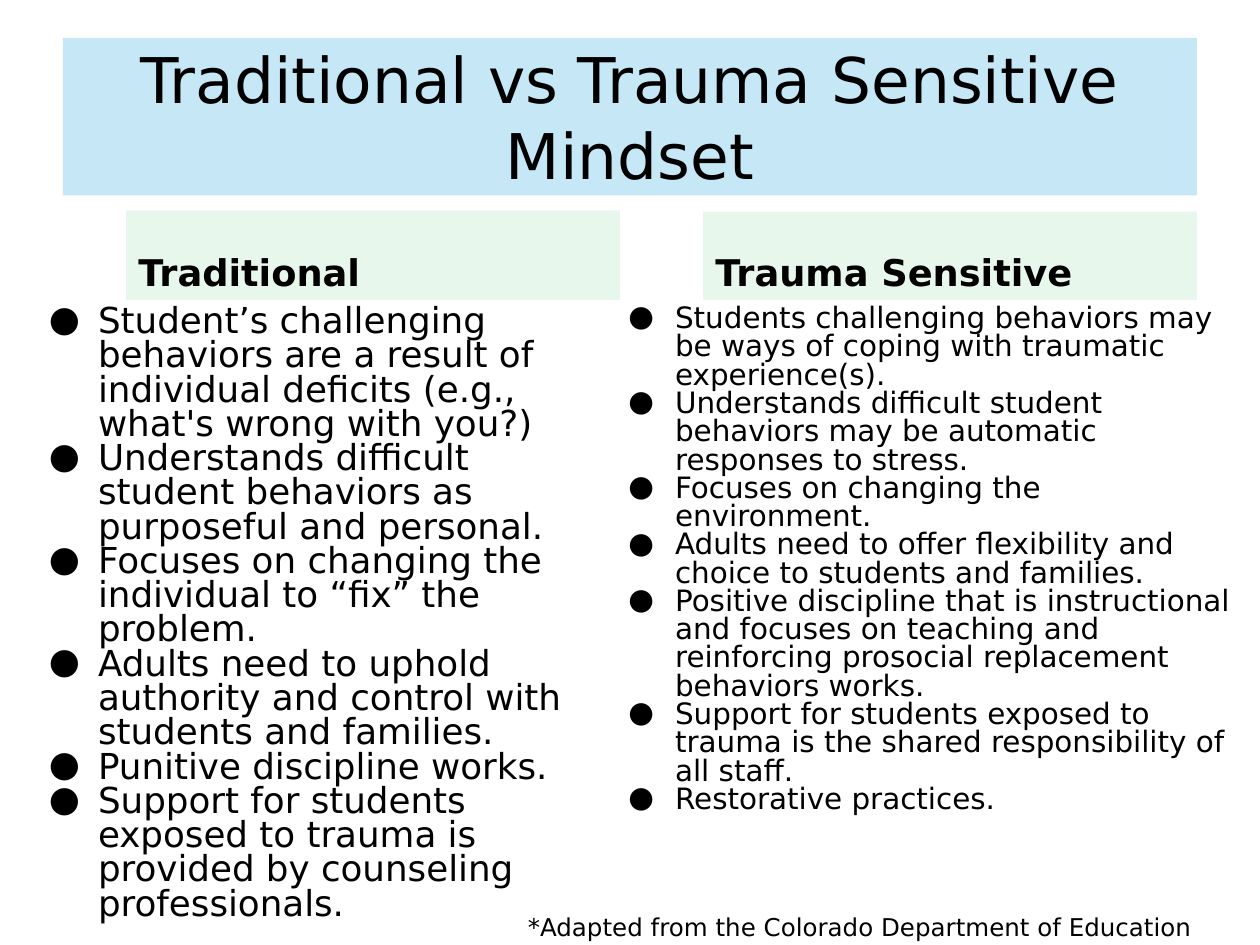
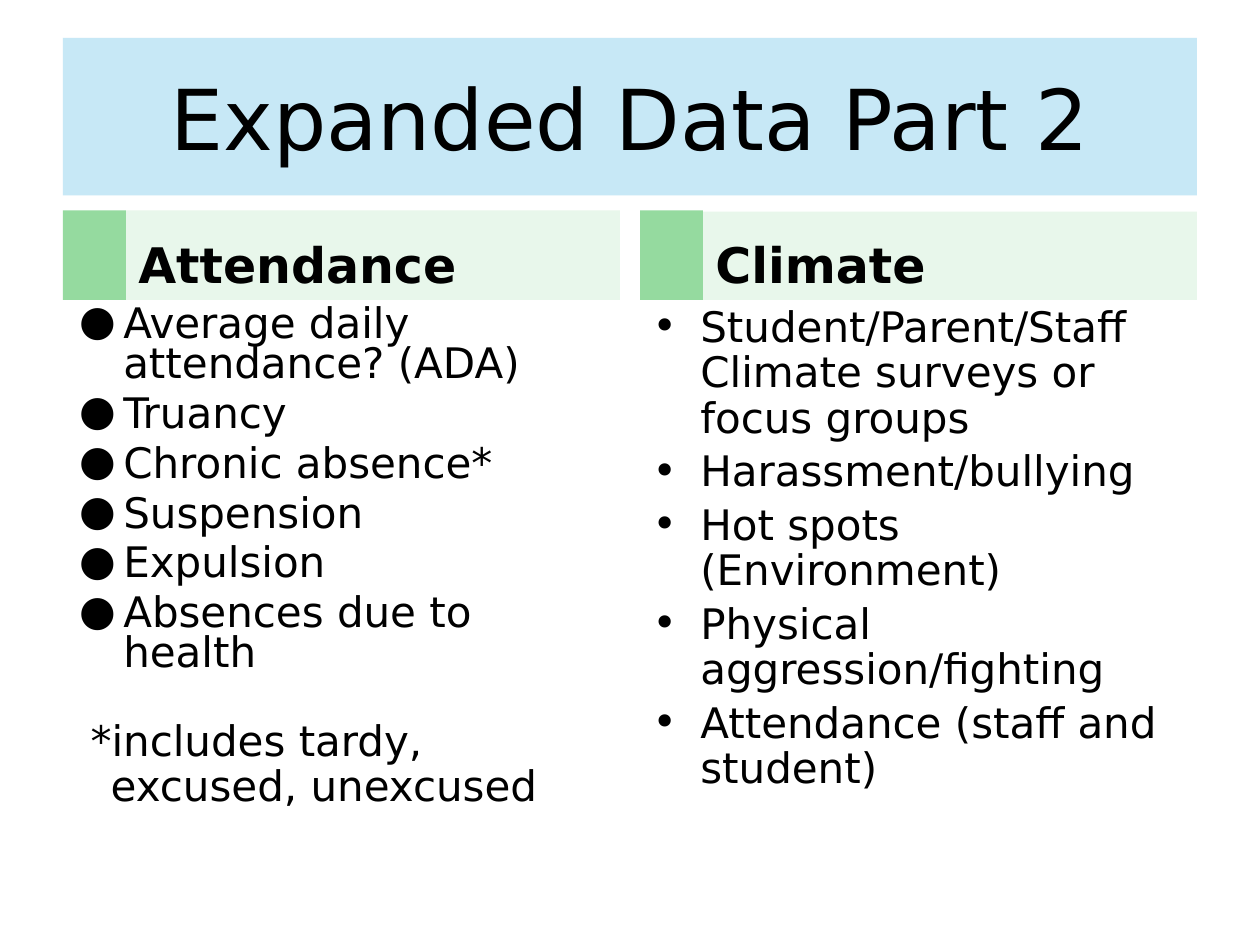
from lxml.etree import SubElement
from pptx import Presentation
from pptx.dml.color import RGBColor
from pptx.enum.shapes import MSO_SHAPE
from pptx.enum.text import MSO_ANCHOR, PP_ALIGN
from pptx.oxml.ns import qn
from pptx.util import Inches, Pt

COLORS = {"text": "000000", "title": "A9DCF2", "heading": "E8F7EB", "tab": "95DA9F"}
FONT = "DejaVu Sans"
TITLE_AT = (0.5, 0.3, 9, 1.25)
HEADING_AT = [(1, 1.67, 3.92, 0.71), (5.58, 1.68, 3.92, 0.7)]
TAB_LEFTS = [0.5, 5.08]
FOOTNOTE = "*Adapted from the Colorado Department of Education"

SLIDES = [
    {
        "title": "Traditional vs Trauma Sensitive Mindset",
        "title_size": 36,
        "title_alpha": 67,
        "heading_size": 21,
        "tabs": False,
        "columns": [
            {
                "heading": "Traditional",
                "at": (0.18, 2.38, 4.74, 5),
                "format": {"size": 20.4, "spacing": 0.8, "bullet": "●", "indent": (0.5, -0.39)},
                "points": [
                    "Student’s challenging behaviors are a result of individual deficits "
                    "(e.g., what's wrong with you?)",
                    "Understands difficult student behaviors as purposeful and personal.",
                    "Focuses on changing the individual to “fix” the problem.",
                    "Adults need to uphold authority and control with students and families.",
                    "Punitive discipline works.",
                    "Support for students exposed to trauma is provided by counseling "
                    "professionals.",
                ],
            },
            {
                "heading": "Trauma Sensitive",
                "at": (4.76, 2.38, 5.14, 5.12),
                "format": {"size": 16.8, "spacing": 0.8, "bullet": "●", "indent": (0.5, -0.37)},
                "points": [
                    "Students challenging behaviors may be ways of coping with traumatic "
                    "experience(s).",
                    "Understands difficult student behaviors may be automatic responses "
                    "to stress.",
                    "Focuses on changing the environment.",
                    "Adults need to offer flexibility and choice to students and families.",
                    "Positive discipline that is instructional and focuses on teaching and "
                    "reinforcing prosocial replacement behaviors works.",
                    "Support for students exposed to trauma is the shared responsibility "
                    "of all staff.",
                    "Restorative practices.",
                ],
            },
        ],
    },
    {
        "title": "Expanded Data Part 2",
        "title_size": 48,
        "title_alpha": 65,
        "heading_size": 28,
        "tabs": True,
        "columns": [
            {
                "heading": "Attendance",
                "at": (0.5, 2.38, 4.42, 4.32),
                "format": {"size": 24, "spacing": 0.8, "before": 5.4, "bullet": "●",
                           "indent": (0.38, -0.35)},
                "points": [
                    "Average daily attendance? (ADA)",
                    "Truancy",
                    "Chronic absence*",
                    "Suspension",
                    "Expulsion",
                    "Absences due to health",
                ],
                "note": "*includes tardy, excused, unexcused",
            },
            {
                "heading": "Climate",
                "at": (5.08, 2.38, 4.42, 4.32),
                "format": {"size": 24, "spacing": 0.9, "before": 4.8, "bullet": "•",
                           "indent": (0.38, -0.38)},
                "points": [
                    "Student/Parent/Staff Climate surveys or focus groups",
                    "Harassment/bullying",
                    "Hot spots (Environment)",
                    "Physical aggression/fighting",
                    "Attendance (staff and student)",
                ],
            },
        ],
    },
]
NOTE_FORMAT = {"size": 24, "spacing": 0.9, "before": 25, "indent": (0.28, -0.16)}


def add_block(slide, at, fill=None, alpha=100, anchor=MSO_ANCHOR.TOP, inset=0.05):
    """Add a text area, filled if a colour is named, and return it."""
    box = [Inches(length) for length in at]
    if fill:
        block = slide.shapes.add_shape(MSO_SHAPE.RECTANGLE, *box)
        block.shadow.inherit = False
        block.line.fill.background()
        block.fill.solid()
        block.fill.fore_color.rgb = RGBColor.from_string(COLORS[fill])
        if alpha < 100:
            color = block.fill._xPr.find(".//" + qn("a:srgbClr"))
            SubElement(color, qn("a:alpha"), val=str(alpha * 1000))
    else:
        block = slide.shapes.add_textbox(*box)
    frame_format = {
        "word_wrap": True, "vertical_anchor": anchor,
        "margin_left": Inches(0.1), "margin_right": Inches(0.1),
        "margin_top": Inches(inset), "margin_bottom": Inches(inset),
    }
    for name, value in frame_format.items():
        setattr(block.text_frame, name, value)
    return block


def write(block, text, size, bold=False, align=PP_ALIGN.LEFT, spacing=1.0, before=0,
          bullet=None, indent=(0, 0)):
    """Write a paragraph at the end of the block."""
    frame = block.text_frame
    first = not frame.text
    paragraph = frame.paragraphs[0] if first else frame.add_paragraph()
    paragraph_format = {
        "alignment": align, "line_spacing": spacing,
        "space_before": Pt(0 if first else before),
    }
    for name, value in paragraph_format.items():
        setattr(paragraph, name, value)
    properties = paragraph._p.get_or_add_pPr()
    for name, length in zip(("marL", "indent"), indent):
        properties.set(name, str(Inches(length)))
    if bullet:
        bullet_color = SubElement(properties, qn("a:buClr"))
        SubElement(bullet_color, qn("a:srgbClr"), val=COLORS["text"])
        SubElement(properties, qn("a:buFont"), typeface=FONT)
        SubElement(properties, qn("a:buChar"), char=bullet)
    run = paragraph.add_run()
    run.text = text
    for name, value in {"name": FONT, "size": Pt(size), "bold": bold}.items():
        setattr(run.font, name, value)
    run.font.color.rgb = RGBColor.from_string(COLORS["text"])


deck = Presentation()
deck.slide_width, deck.slide_height = Inches(10), Inches(7.5)

for content in SLIDES:
    slide = deck.slides.add_slide(deck.slide_layouts[6])
    if content["tabs"]:
        for left in TAB_LEFTS:
            add_block(slide, (left, 1.67, 0.5, 0.71), "tab")

    title = add_block(slide, TITLE_AT, "title", content["title_alpha"], MSO_ANCHOR.MIDDLE)
    write(title, content["title"], content["title_size"], align=PP_ALIGN.CENTER)

    for column, heading_at in zip(content["columns"], HEADING_AT):
        heading = add_block(slide, heading_at, "heading", anchor=MSO_ANCHOR.BOTTOM)
        write(heading, column["heading"], content["heading_size"], bold=True)
        points = add_block(slide, column["at"])
        for point in column["points"]:
            write(points, point, **column["format"])
        if "note" in column:
            write(points, column["note"], **NOTE_FORMAT)

footnote = add_block(deck.slides[0], (4.09, 7.14, 5.91, 0.44), inset=0.1)
write(footnote, FOOTNOTE, 14)

deck.save("out.pptx")
